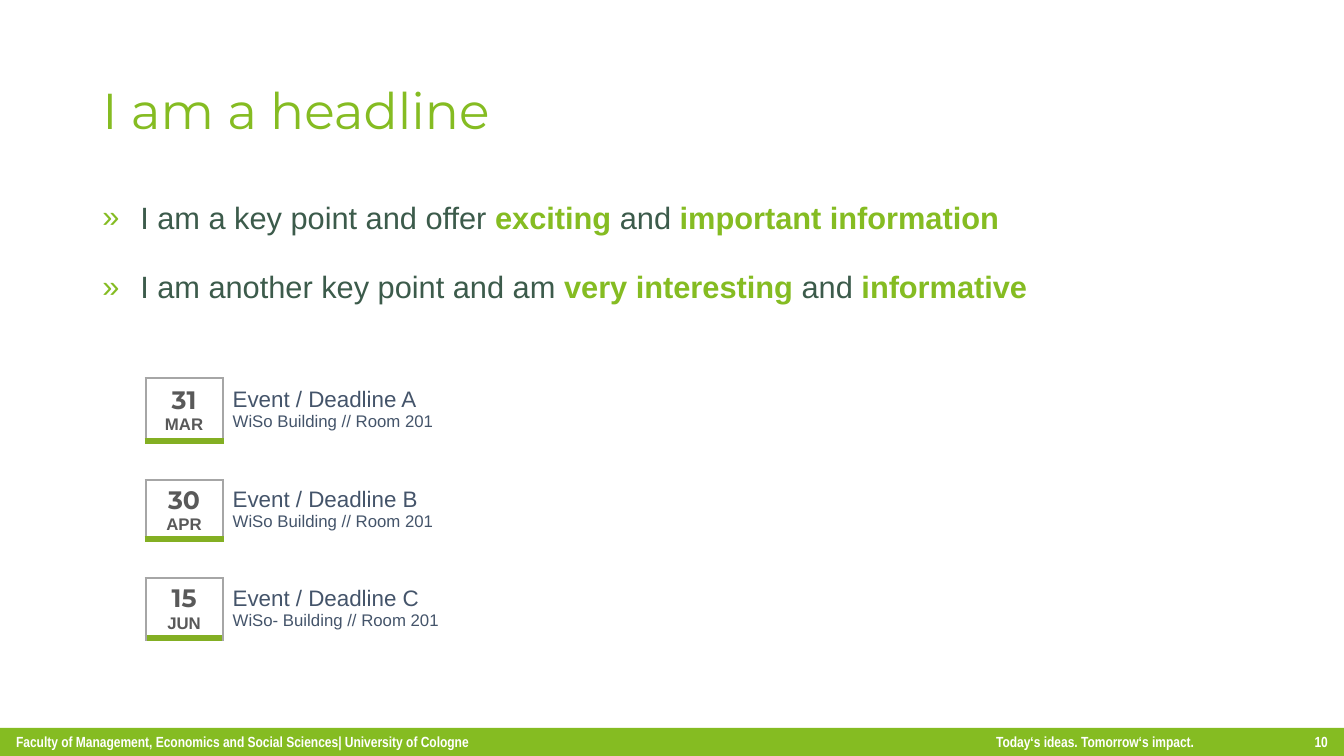
from lxml import etree
from pptx import Presentation
from pptx import util as u
from pptx.dml import color
from pptx.enum import shapes, text
from pptx.oxml import ns

# Content
HEADLINE = "I am a headline"
KEY_POINTS = [  # (text, emphasised)
    [("I am a key point and offer ", False), ("exciting", True),
     (" and ", False), ("important information", True)],
    [("I am another key point and am ", False), ("very interesting ", True),
     ("and ", False), ("informative", True)],
]
EVENTS = [  # day, month, event, place, row height
    ("31", "MAR", "Event / Deadline A", "WiSo Building // Room 201", 45),
    ("30", "APR", "Event / Deadline B", "WiSo Building // Room 201", 42),
    ("15", "JUN", "Event / Deadline C", "WiSo- Building // Room 201", 43),
]
FACULTY = "Faculty of Management, Economics and Social Sciences| University of Cologne"
SLOGAN = "Today‘s ideas. Tomorrow‘s impact."
PAGE = "10"

# Style
GREEN, DARK_GREEN, RULE_GREEN = "85BC22", "3C5B4B", "83AF23"
WHITE, DAY_GREY, EVENT_BLUE, BORDER_GREY = "FFFFFF", "595959", "44546A", "A6A6A6"
NO_STYLE = "{2D5ABB26-0587-4C30-8999-92F81FD0307C}"
FOOTER_FONT = dict(font="Arial Narrow", size=10.5, colour=WHITE, bold=True)
WIDTH, HEIGHT, FOOTER_HEIGHT = 960, 540, 20
LEFT, CONTENT_WIDTH = 66, 828
TABLE_LEFT, TABLE_TOP, DATE_WIDTH, EVENT_WIDTH, GAP = 104, 270, 55, 563, 28


def rgb(value):
    return color.RGBColor.from_string(value)


def add_xml(parent, tag, **attributes):
    return etree.SubElement(parent, ns.qn(tag), attributes)


def write(frame, paragraphs, font="Arial", size=18, colour=DARK_GREEN, bold=False,
          align=text.PP_ALIGN.LEFT, anchor=text.MSO_ANCHOR.MIDDLE,
          spacing=None, before=None, bullet=None, tab=None):
    """Fill a frame; each paragraph is a list of (text, format overrides)."""
    frame.word_wrap = True
    frame.auto_size = text.MSO_AUTO_SIZE.NONE
    frame.vertical_anchor = anchor
    for index, runs in enumerate(paragraphs):
        paragraph = frame.add_paragraph() if index else frame.paragraphs[0]
        properties = paragraph._p.get_or_add_pPr()
        if bullet:
            properties.set("marL", str(u.Pt(27)))
            properties.set("indent", str(-u.Pt(27)))
            add_xml(add_xml(properties, "a:buClr"), "a:srgbClr", val=GREEN)
            add_xml(properties, "a:buFont", typeface="Arial")
            add_xml(properties, "a:buChar", char=bullet)
        if tab:
            add_xml(add_xml(properties, "a:tabLst"), "a:tab",
                    pos=str(u.Pt(tab)), algn="l")
        paragraph.alignment = align
        if spacing:
            paragraph.line_spacing = spacing
        if before is not None:
            paragraph.space_before = u.Pt(before if index else 0)
        for words, changes in runs:
            look = dict(font=font, size=size, colour=colour, bold=bold) | changes
            run = paragraph.add_run()
            run.text = words
            run.font.name = look["font"]
            run.font.size = u.Pt(look["size"])
            run.font.bold = look["bold"]
            run.font.color.rgb = rgb(look["colour"])


def set_margins(target, left, top, right, bottom):
    target.margin_left, target.margin_top = u.Pt(left), u.Pt(top)
    target.margin_right, target.margin_bottom = u.Pt(right), u.Pt(bottom)


def place(shape, left, top, width, height):
    shape.left, shape.top = u.Pt(left), u.Pt(top)
    shape.width, shape.height = u.Pt(width), u.Pt(height)


def style_cell(cell, **borders):
    """Borders are given as L, R, T, B = (colour, points)."""
    properties = cell._tc.get_or_add_tcPr()
    for side in "LRTB":
        if side in borders:
            colour, weight = borders[side]
            line = add_xml(properties, f"a:ln{side}", w=str(u.Pt(weight)))
            add_xml(add_xml(line, "a:solidFill"), "a:srgbClr", val=colour)
    cell.fill.background()


deck = Presentation()
deck.slide_width, deck.slide_height = u.Pt(WIDTH), u.Pt(HEIGHT)
slide = deck.slides.add_slide(deck.slide_layouts[1])

# Headline and key points
headline, key_points = slide.placeholders
place(headline, LEFT, 29, CONTENT_WIDTH, 104)
write(headline.text_frame, [[(HEADLINE, {})]], font="Montserrat", size=36,
      colour=GREEN, spacing=0.9)
place(key_points, LEFT, 125, CONTENT_WIDTH, 361)
emphasis = dict(colour=GREEN, bold=True)
write(key_points.text_frame,
      [[(words, emphasis if strong else {}) for words, strong in point]
       for point in KEY_POINTS],
      size=22, anchor=text.MSO_ANCHOR.TOP, spacing=1.5, before=10, bullet="»")

# Event table: a gap row stands between two events
heights = [GAP] * (2 * len(EVENTS) - 1)
heights[::2] = [event[-1] for event in EVENTS]
frame = slide.shapes.add_table(len(heights), 2, u.Pt(TABLE_LEFT), u.Pt(TABLE_TOP),
                               u.Pt(DATE_WIDTH + EVENT_WIDTH), u.Pt(sum(heights)))
calendar = frame.table
calendar.first_row = calendar.horz_banding = False
calendar._tbl.tblPr.find(ns.qn("a:tableStyleId")).text = NO_STYLE
for column, width in zip(calendar.columns, (DATE_WIDTH, EVENT_WIDTH)):
    column.width = u.Pt(width)
for row, height in zip(calendar.rows, heights):
    row.height = u.Pt(height)
    for cell in row.cells:
        set_margins(cell, 7.2, 2, 7.2, 2)

thin, rule = (BORDER_GREY, 1.5), (RULE_GREEN, 4.5)
for index, (day, month, event, venue, _) in enumerate(EVENTS):
    date_cell, event_cell = calendar.rows[2 * index].cells
    style_cell(date_cell, L=thin, R=thin, T=thin, B=rule)
    style_cell(event_cell, L=thin)
    write(date_cell.text_frame,
          [[(day, dict(font="Montserrat", size=18))], [(month, {})]],
          size=12, colour=DAY_GREY, bold=True, align=text.PP_ALIGN.CENTER)
    write(event_cell.text_frame, [[(event, dict(size=16))], [(venue, {})]],
          size=12, colour=EVENT_BLUE)
    date_cell.vertical_anchor = event_cell.vertical_anchor = text.MSO_ANCHOR.MIDDLE
for index in range(1, len(heights), 2):
    gap_cell, blank_cell = calendar.rows[index].cells
    style_cell(gap_cell, T=rule, B=thin)
    style_cell(blank_cell)

# Footer bar and page number
footer_top = HEIGHT - FOOTER_HEIGHT
footer = slide.shapes.add_shape(shapes.MSO_SHAPE.RECTANGLE, 0, u.Pt(footer_top),
                                u.Pt(WIDTH), u.Pt(FOOTER_HEIGHT))
footer.shadow.inherit = False
footer.fill.solid()
footer.fill.fore_color.rgb = rgb(GREEN)
footer.line.fill.background()
set_margins(footer.text_frame, 11.5, 0, 0, 0)
write(footer.text_frame, [[(f"{FACULTY}\t{SLOGAN}", {})]], tab=700, **FOOTER_FONT)

page = slide.shapes.add_textbox(u.Pt(918), u.Pt(footer_top), u.Pt(42), u.Pt(FOOTER_HEIGHT))
set_margins(page.text_frame, 7.2, 3.6, 11.5, 3.6)
write(page.text_frame, [[(PAGE, {})]], align=text.PP_ALIGN.RIGHT, **FOOTER_FONT)

deck.save("out.pptx")
